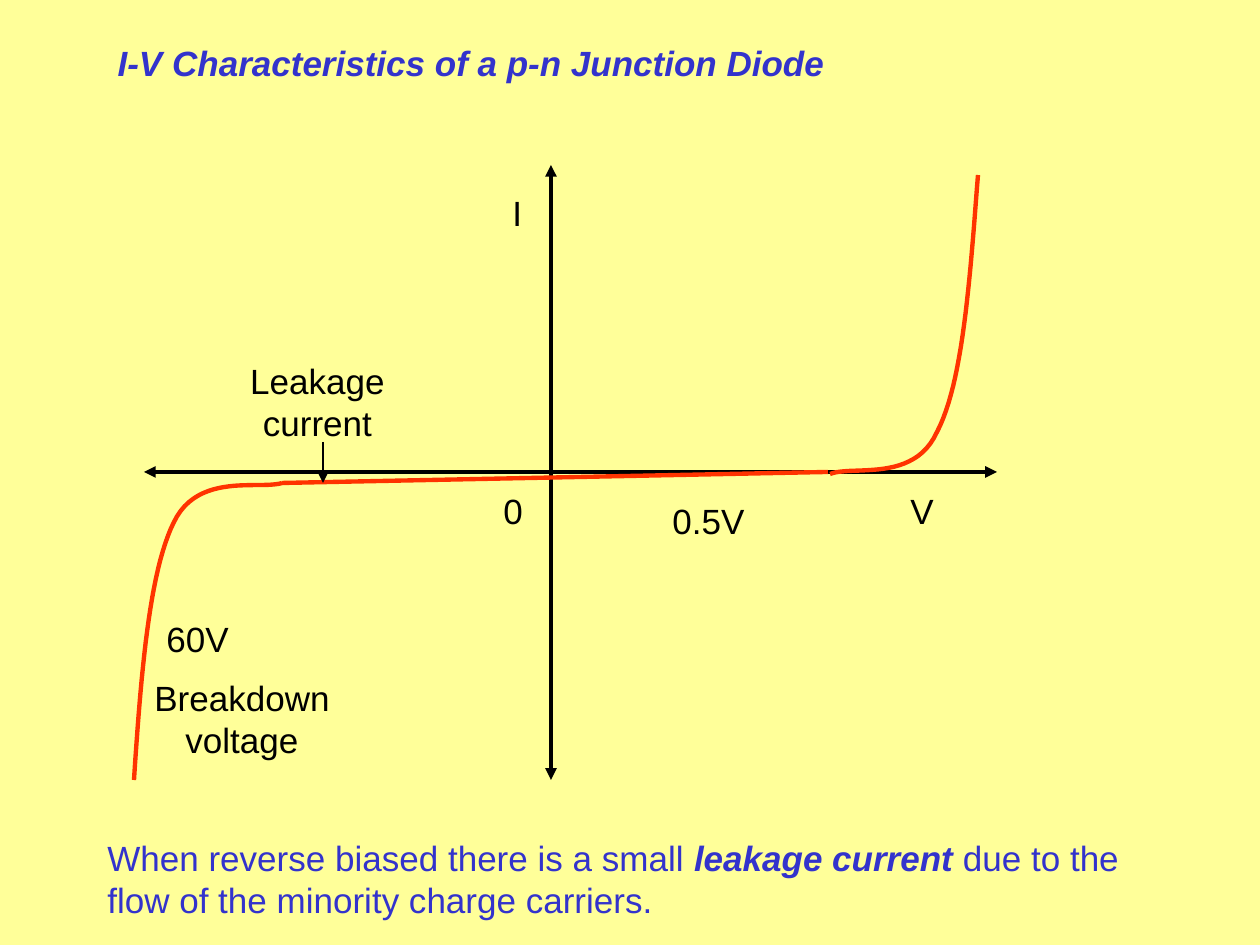
from pptx import Presentation
from pptx.dml.color import RGBColor
from pptx.enum.shapes import MSO_CONNECTOR
from pptx.enum.text import MSO_ANCHOR, MSO_AUTO_SIZE, PP_ALIGN
from pptx.oxml.ns import qn
from pptx.util import Pt
from lxml.etree import SubElement

HUES = {"page": "FFFF99", "head": "3333CC", "ink": "000000", "curve": "FF3300"}
PX = 914400 / 126
STEPS = 24

TITLE = ("I-V Characteristics of a p-n Junction Diode", (105, 35, 1052, 54))
NOTE = ([("When reverse biased there is a small ", False),
         ("leakage current", True),
         (" due to the flow of the minority charge carriers.", False)],
        (95, 830, 1071, 97))

# text, box, centred
LABELS = [
    ("0", (491, 483, 49, 54), False),
    ("I", (500, 185, 49, 54), False),
    ("V", (898, 483, 49, 54), False),
    ("Leakage current", (223, 353, 189, 97), True),
    ("0.5V", (660, 493, 110, 54), False),
    ("60V", (154, 611, 179, 54), False),
    ("Breakdown voltage", (123, 670, 238, 97), True),
]

# start, end, colour, points, arrowheads
AXES = [
    ((551, 165), (551, 780), "ink", 2.25, ("headEnd", "tailEnd")),
    ((997, 472), (144, 472), "ink", 2.25, ("headEnd", "tailEnd")),
]
LEAK = [
    ((282, 483), (828, 472), "curve", 2.5, ()),
    ((323, 442), (323, 483), "ink", 0.75, ("tailEnd",)),
]

# start, then two controls and an end for each Bezier piece
CURVES = [
    [(134, 780), (141, 675), (149, 572), (174, 522),
     (198, 472), (260, 490), (282, 483)],
    [(978, 175), (970, 278), (963, 383), (937, 432),
     (914, 483), (853, 465), (830, 474)],
]


def emu(nums):
    return [round(n * PX) for n in nums]


def tint(name):
    return RGBColor.from_string(HUES[name])


def style(line, hue, width):
    line.color.rgb = tint(hue)
    line.width = Pt(width)


def write(shape, runs, hue, align=PP_ALIGN.LEFT):
    """Fill a text shape with (text, bold italic) runs."""
    frame = shape.text_frame
    look = {"word_wrap": True, "auto_size": MSO_AUTO_SIZE.NONE,
            "vertical_anchor": MSO_ANCHOR.TOP}
    for key, val in look.items():
        setattr(frame, key, val)
    para = frame.paragraphs[0]
    para.alignment = align
    for text, strong in runs:
        run = para.add_run()
        run.text = text
        font = {"name": "Arial", "size": Pt(20), "bold": strong, "italic": strong}
        for key, val in font.items():
            setattr(run.font, key, val)
        run.font.color.rgb = tint(hue)


def add_text(slide, runs, box, hue, align=PP_ALIGN.LEFT):
    write(slide.shapes.add_textbox(*emu(box)), runs, hue, align)


def add_line(slide, start, end, hue, width, heads):
    line = slide.shapes.add_connector(MSO_CONNECTOR.STRAIGHT, *emu(start + end))
    style(line.line, hue, width)
    props = line._element.spPr
    for head in heads:
        SubElement(props.find(qn("a:ln")), qn("a:" + head), type="triangle")
    SubElement(props, qn("a:effectLst"))


def trace(knots):
    """Sample joined cubic Bezier pieces into EMU points."""
    spots = [emu(knots[0])]
    for i in range(0, len(knots) - 1, 3):
        axes = list(zip(*knots[i:i + 4]))
        for step in range(1, STEPS + 1):
            t = step / STEPS
            u = 1 - t
            parts = (u ** 3, 3 * u * u * t, 3 * u * t * t, t ** 3)
            spots.append(emu(sum(p * k for p, k in zip(parts, axis))
                             for axis in axes))
    return spots


def add_curve(slide, knots):
    first, *rest = trace(knots)
    pen = slide.shapes.build_freeform(*first)
    pen.add_line_segments(rest, close=False)
    curve = pen.convert_to_shape()
    curve.shadow.inherit = False
    curve.fill.background()
    style(curve.line, "curve", 2.5)


def main():
    deck = Presentation()
    deck.slide_width, deck.slide_height = emu((1260, 945))
    slide = deck.slides.add_slide(deck.slide_layouts[5])
    fill = slide.background.fill
    fill.solid()
    fill.fore_color.rgb = tint("page")

    text, box = TITLE
    title = slide.shapes.title
    for key, val in zip(("left", "top", "width", "height"), emu(box)):
        setattr(title, key, val)
    write(title, [(text, True)], "head")

    for axis in AXES:
        add_line(slide, *axis)
    for knots in CURVES:
        add_curve(slide, knots)
    for line in LEAK:
        add_line(slide, *line)
    for text, box, mid in LABELS:
        add_text(slide, [(text, False)], box, "ink",
                 PP_ALIGN.CENTER if mid else PP_ALIGN.LEFT)
    add_text(slide, *NOTE, "head")
    deck.save("out.pptx")


if __name__ == "__main__":
    main()
